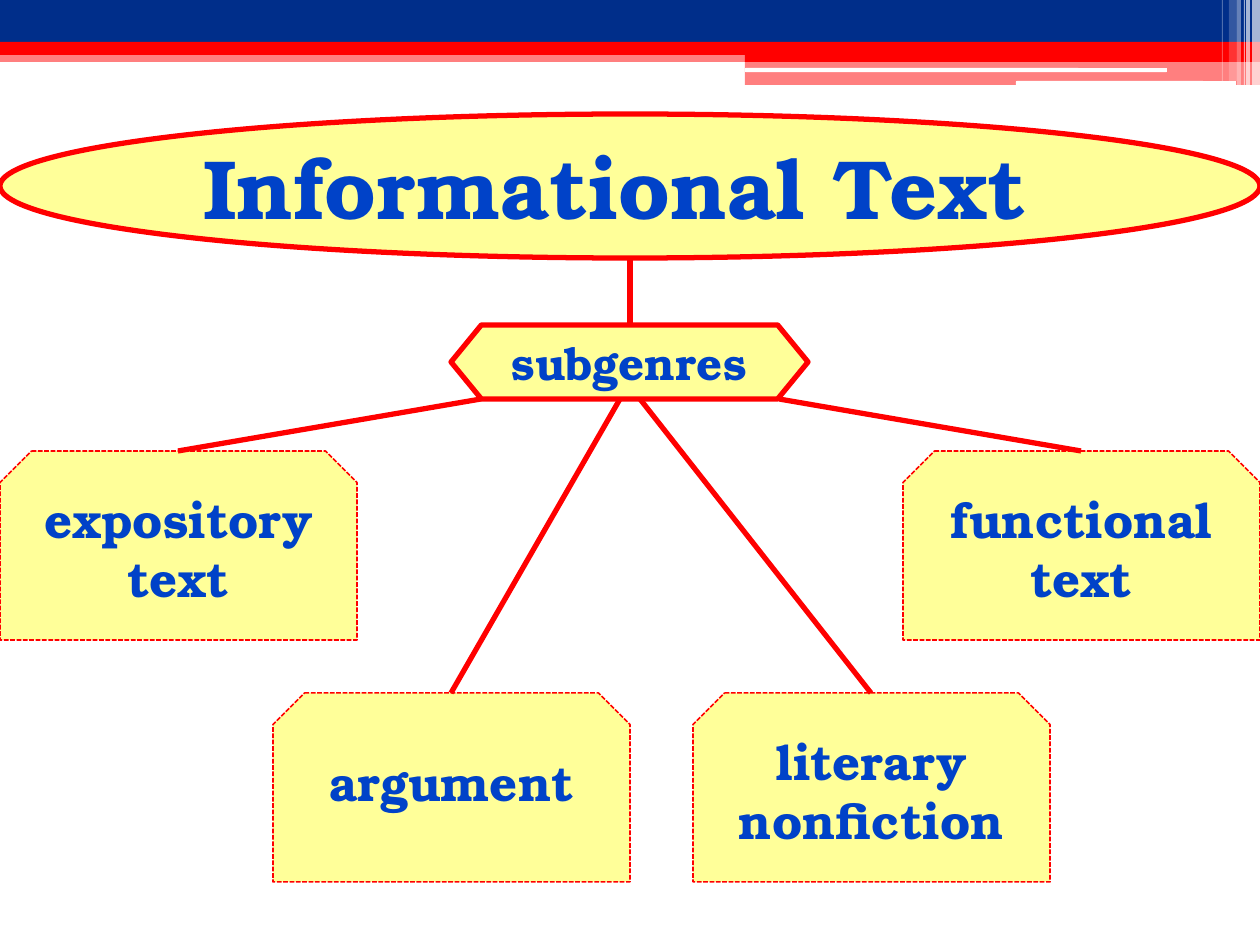
from dataclasses import dataclass

from lxml import etree
from pptx import Presentation
from pptx.dml.color import RGBColor
from pptx.enum.dml import MSO_LINE_DASH_STYLE as DASH
from pptx.enum.shapes import MSO_CONNECTOR as CONN, MSO_SHAPE as SHAPE
from pptx.enum.text import MSO_ANCHOR as ANCHOR, MSO_AUTO_SIZE as AUTO, PP_ALIGN as ALIGN
from pptx.oxml.ns import qn
from pptx.util import Emu, Pt

SCALE = 914400 / 126


def px(n):
    return Emu(round(n * SCALE))


@dataclass(frozen=True)
class Theme:
    font: str = "TeX Gyre Bonum"
    navy: str = "002E8A"
    red: str = "FF0000"
    white: str = "FFFFFF"
    yellow: str = "FFFF99"
    text: str = "0042C8"
    title_size: int = 48
    hub_size: int = 26
    label_size: int = 28
    thick: float = 3
    thin: float = 0.9


class Diagram:
    def __init__(self, slide, theme):
        self.slide = slide
        self.shapes = slide.shapes
        self.theme = theme

    def shape(self, kind, box, fill, alpha=100):
        sp = self.shapes.add_shape(kind, *map(px, box))
        sp.shadow.inherit = False
        sp.fill.solid()
        sp.fill.fore_color.rgb = RGBColor.from_string(fill)
        sp.line.fill.background()
        if alpha < 100:
            color = sp.element.spPr.find(".//" + qn("a:srgbClr"))
            etree.SubElement(color, qn("a:alpha"), val=str(alpha * 1000))
        return sp

    def outlined(self, kind, box, width, dash=None):
        sp = self.shape(kind, box, self.theme.yellow)
        self.stroke(sp.line, width)
        if dash:
            sp.line.dash_style = dash
        return sp

    def stroke(self, line, width):
        line.color.rgb = RGBColor.from_string(self.theme.red)
        line.width = Pt(width)

    def set_text(self, tf, lines, size):
        tf.word_wrap = True
        tf.text = "\n".join(lines)
        for p in tf.paragraphs:
            p.alignment = ALIGN.CENTER
            p.font.name = self.theme.font
            p.font.size = Pt(size)
            p.font.bold = True
            p.font.color.rgb = RGBColor.from_string(self.theme.text)

    def center(self, tf):
        tf.vertical_anchor = ANCHOR.MIDDLE
        tf.margin_left = tf.margin_top = tf.margin_right = tf.margin_bottom = 0

    def title(self, text, box):
        sp = self.shapes.title
        sp.left, sp.top, sp.width, sp.height = map(px, box)
        self.set_text(sp.text_frame, [text], self.theme.title_size)
        sp.text_frame.auto_size = AUTO.NONE
        self.center(sp.text_frame)
        self.shapes.element.append(sp.element)

    def hub(self, text, box):
        sp = self.outlined(SHAPE.HEXAGON, box, self.theme.thick)
        sp.adjustments[0] = 0.41
        self.set_text(sp.text_frame, [text], self.theme.hub_size)
        self.center(sp.text_frame)

    def label(self, lines, box):
        tf = self.shapes.add_textbox(*map(px, box)).text_frame
        self.set_text(tf, lines, self.theme.label_size)

    def connector(self, start, end):
        line = self.shapes.add_connector(CONN.STRAIGHT, *map(px, start + end))
        self.stroke(line.line, self.theme.thick)
        etree.SubElement(line.element.spPr, qn("a:effectLst"))


def draw_header(d):
    t = d.theme
    bars = [
        ((0, 50, 1260, 12), t.red, 50),
        ((0, 0, 1260, 42), t.navy, 100),
        ((0, 42, 1260, 13), t.red, 100),
        ((745, 49, 515, 13), t.red, 100),
        ((745, 61, 515, 24), t.red, 50),
    ]
    for box, color, alpha in bars:
        d.shape(SHAPE.RECTANGLE, box, color, alpha)
    for box in [(745, 68, 422, 4), (1016, 81, 220, 4)]:
        d.shape(SHAPE.ROUNDED_RECTANGLE, box, t.white)
    strips = [
        (1252, 8, 85, 65), (1246, 4, 85, 65), (1244, 1, 85, 60),
        (1237, 4, 85, 40), (1229, 8, 81, 20), (1222, 1, 81, 30),
    ]
    for x, w, h, alpha in strips:
        d.shape(SHAPE.RECTANGLE, (x, 0, w, h), t.white, alpha)


def draw_map(d):
    t = d.theme
    d.outlined(SHAPE.OVAL, (0, 114, 1260, 144), t.thick)
    d.title("Informational Text", (0, 114, 1230, 144))
    d.connector((630, 258), (630, 325))
    d.hub("subgenres", (451, 325, 357, 74))

    card_w, card_h = 357, 189
    two_lines, one_line = (32, 131), (53, 72)
    subgenres = [
        (["expository", "text"], 0, 451, 481, two_lines),
        (["argument"], 273, 693, 620, one_line),
        (["literary nonfiction"], 693, 693, 640, two_lines),
        (["functional text"], 903, 451, 779, two_lines),
    ]
    for lines, x, y, hub_x, (offset, height) in subgenres:
        d.outlined(SHAPE.SNIP_2_SAME_RECTANGLE, (x, y, card_w, card_h),
                   t.thin, DASH.SQUARE_DOT)
        d.connector((hub_x, 399), (x + card_w // 2, y))
        d.label(lines, (x, y + offset, card_w, height))


def main():
    prs = Presentation()
    prs.slide_width, prs.slide_height = px(1260), px(945)
    diagram = Diagram(prs.slides.add_slide(prs.slide_layouts[5]), Theme())
    draw_header(diagram)
    draw_map(diagram)
    prs.save("out.pptx")


if __name__ == "__main__":
    main()
